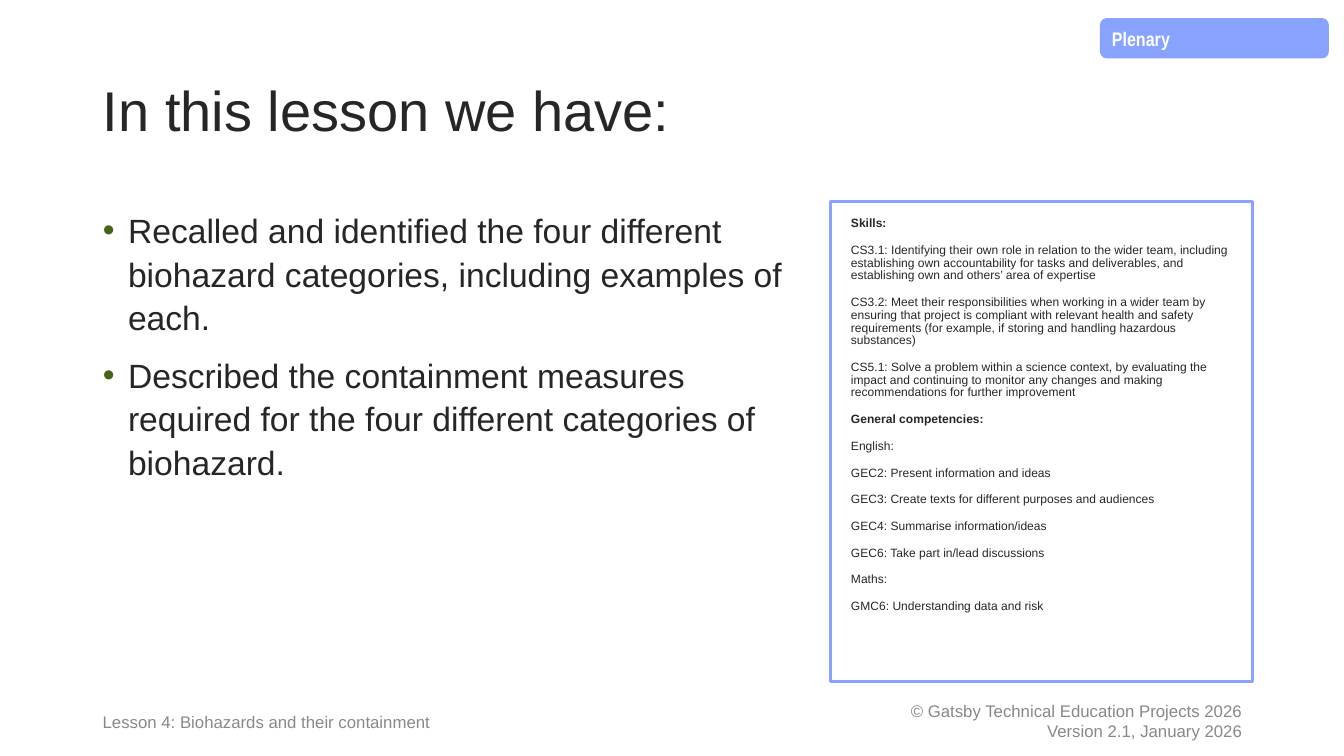
from dataclasses import dataclass

from lxml import etree
from pptx import Presentation
from pptx.dml.color import RGBColor
from pptx.enum.shapes import MSO_SHAPE as Preset
from pptx.enum.text import MSO_ANCHOR as Anchor, MSO_AUTO_SIZE as AutoSize, PP_ALIGN as Align
from pptx.oxml.ns import qn
from pptx.util import Inches, Pt


@dataclass(frozen=True)
class Theme:
    font: str = "Arial"
    tag_font: str = "Arial Narrow"
    ink: str = "262626"
    accent: str = "88A2FF"
    white: str = "FFFFFF"
    bullet: str = "466318"
    copyright: str = "888888"
    lesson: str = "898989"
    title_size: float = 40
    body_size: float = 24
    tag_size: float = 14
    footer_size: float = 12
    skills_size: float = 8.6


THEME = Theme()
LEFT, CONTENT_TOP, CONTENT_HEIGHT = 0.92, 2, 4.76
FOOTER_TOP, FOOTER_HEIGHT = 6.95, 0.4

OUTCOMES = [
    "Recalled and identified the four different biohazard categories, including examples of each.",
    "Described the containment measures required for the four different categories of biohazard.",
]
SKILLS_HEADINGS = ("Skills:", "General competencies:")
SKILLS = [
    SKILLS_HEADINGS[0],
    "CS3.1: Identifying their own role in relation to the wider team, including establishing own "
    "accountability for tasks and deliverables, and establishing own and others’ area of expertise",
    "CS3.2: Meet their responsibilities when working in a wider team by ensuring that project is "
    "compliant with relevant health and safety requirements (for example, if storing and handling "
    "hazardous substances)",
    "CS5.1: Solve a problem within a science context, by evaluating the impact and continuing to "
    "monitor any changes and making recommendations for further improvement",
    SKILLS_HEADINGS[1],
    "English:",
    "GEC2: Present information and ideas",
    "GEC3: Create texts for different purposes and audiences",
    "GEC4: Summarise information/ideas",
    "GEC6: Take part in/lead discussions",
    "Maths:",
    "GMC6: Understanding data and risk",
]


def color(value):
    return RGBColor.from_string(value)


def place(shape, left, top, width, height):
    shape.left, shape.top = Inches(left), Inches(top)
    shape.width, shape.height = Inches(width), Inches(height)


def set_bullet(paragraph, char=None):
    """Give the paragraph a hanging bullet, or none at all."""
    props = paragraph._p.get_or_add_pPr()
    indent = Inches(0.25) if char else 0
    props.set("marL", str(indent))
    props.set("indent", str(-indent))
    if char:
        bullet_color = etree.SubElement(props, qn("a:buClr"))
        etree.SubElement(bullet_color, qn("a:srgbClr"), val=THEME.bullet)
        etree.SubElement(props, qn("a:buFont"), typeface=THEME.font)
        etree.SubElement(props, qn("a:buChar"), char=char)
    else:
        etree.SubElement(props, qn("a:buNone"))


def write(shape, lines, size, ink=THEME.ink, font=THEME.font, align=Align.LEFT, anchor=Anchor.TOP,
          spacing=1.08, gap=0, inset=(0.1, 0.05), bullet=None, bold=()):
    """Fill a shape with paragraphs; lines listed in bold are set bold."""
    frame = shape.text_frame
    frame.text = "\n".join(lines)
    frame.word_wrap = True
    frame.auto_size = AutoSize.NONE
    frame.vertical_anchor = anchor
    frame.margin_left = frame.margin_right = Inches(inset[0])
    frame.margin_top = frame.margin_bottom = Inches(inset[1])
    for index, paragraph in enumerate(frame.paragraphs):
        set_bullet(paragraph, bullet)
        paragraph.alignment = align
        paragraph.line_spacing = spacing
        paragraph.space_before = Pt(gap if index else 0)
        paragraph.space_after = Pt(0)
        for run in paragraph.runs:
            run.font.name = font
            run.font.size = Pt(size)
            run.font.bold = run.text in bold
            run.font.color.rgb = color(ink)


def add_footer(slide, left, width, lines, ink, **style):
    footer = slide.shapes.add_textbox(
        Inches(left), Inches(FOOTER_TOP), Inches(width), Inches(FOOTER_HEIGHT))
    write(footer, lines, THEME.footer_size, ink, anchor=Anchor.MIDDLE, **style)


def add_tag(slide, label):
    tag = slide.shapes.add_shape(
        Preset.FLOWCHART_ALTERNATE_PROCESS, Inches(10.91), Inches(0.18), Inches(2.27), Inches(0.4))
    tag.shadow.inherit = False
    tag.fill.solid()
    tag.fill.fore_color.rgb = color(THEME.accent)
    tag.line.fill.background()
    write(tag, [label], THEME.tag_size, THEME.white, THEME.tag_font, bold=[label])


def fill_skills(panel):
    place(panel, 8.24, CONTENT_TOP, 4.18, CONTENT_HEIGHT)
    panel.fill.solid()
    panel.fill.fore_color.rgb = color(THEME.white)
    panel.line.color.rgb = color(THEME.accent)
    panel.line.width = Pt(2.25)
    write(panel, SKILLS, THEME.skills_size, spacing=0.88, gap=10, inset=(0.2, 0.16),
          bold=SKILLS_HEADINGS)


def main():
    deck = Presentation()
    deck.slide_width, deck.slide_height = Inches(13.33), Inches(7.5)
    slide = deck.slides.add_slide(deck.slide_layouts.get_by_name("Two Content"))
    title, outcomes, skills = slide.placeholders

    # Title and lesson outcomes
    place(title, LEFT, 0.4, 11.5, 1.45)
    write(title, ["In this lesson we have:"], THEME.title_size, anchor=Anchor.MIDDLE, spacing=0.9)
    place(outcomes, LEFT, CONTENT_TOP, 7, CONTENT_HEIGHT)
    write(outcomes, OUTCOMES, THEME.body_size, gap=10, bullet="•")

    # Skills panel and section tag
    fill_skills(skills)
    add_tag(slide, "Plenary")

    # Footers
    add_footer(slide, LEFT, 4.6, ["Lesson 4: Biohazards and their containment"], THEME.lesson)
    add_footer(slide, 7.92, 4.5,
               ["© Gatsby Technical Education Projects 2026", "Version 2.1, January 2026"],
               THEME.copyright, align=Align.RIGHT, spacing=1.0)

    deck.save("out.pptx")


if __name__ == "__main__":
    main()
